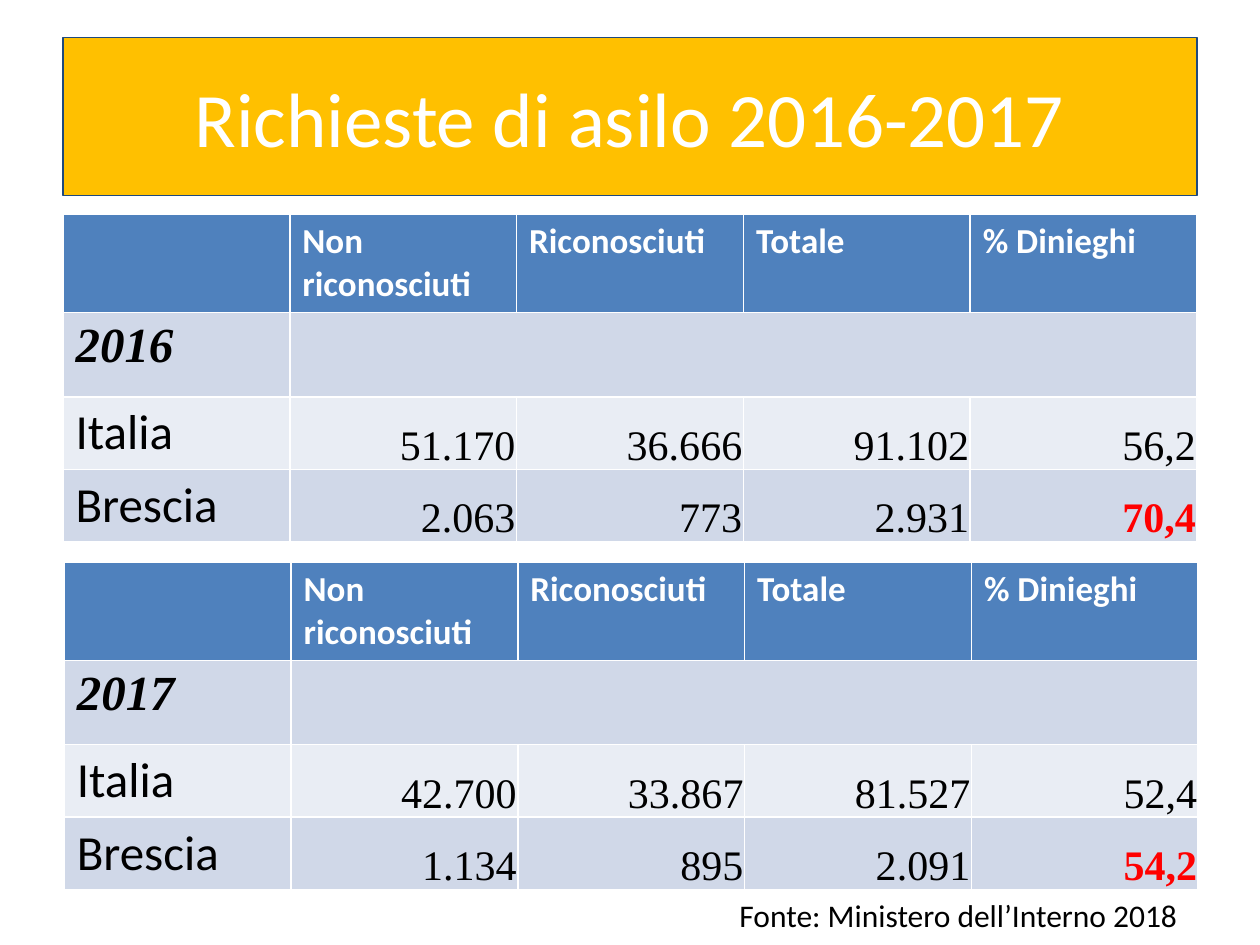
import pptx
import pptx.util
import pptx.dml.color
import pptx.enum.shapes
import pptx.enum.text

ALIGN = pptx.enum.text.PP_ALIGN
ANCHOR = pptx.enum.text.MSO_ANCHOR
SANS, SERIF = "Calibri", "Times New Roman"
WHITE, BLACK, RED = "FFFFFF", "000000", "FF0000"
GOLD, NAVY, BLUE = "FFC000", "1F497D", "4F81BD"
DARK, LIGHT = "D0D8E8", "E9EDF4"

COLS, ROWS = 100, 75  # slide grid, ten units to the inch
HEAD = ["", "Non riconosciuti", "Riconosciuti", "Totale", "% Dinieghi"]
HIGHS = [7.7, 6.7, 5.7, 5.7]


def tint(code):
    return pptx.dml.color.RGBColor.from_string(code)


def unit(size):
    return pptx.util.Inches(size / 10)


def paint(part, code):
    part.fill.solid()
    part.fill.fore_color.rgb = tint(code)


class Deck:
    def __init__(self):
        self.file = pptx.Presentation()
        self.file.slide_width = unit(COLS)
        self.file.slide_height = unit(ROWS)
        self.slide = self.file.slides.add_slide(self.file.slide_layouts[6])

    def label(self, frame, text, size, color, font=SANS, bold=False,
              slant=False, align=ALIGN.LEFT, space=None):
        frame.text = text
        for para in frame.paragraphs:
            para.alignment = align
            para.line_spacing = space
            for run in para.runs:
                run.font.name = font
                run.font.size = pptx.util.Pt(size)
                run.font.bold = bold
                run.font.italic = slant
                run.font.color.rgb = tint(color)

    def title(self, text, *box):
        shape = self.slide.shapes.add_shape(
            pptx.enum.shapes.MSO_SHAPE.RECTANGLE, *map(unit, box))
        shape.shadow.inherit = False
        paint(shape, GOLD)
        shape.line.color.rgb = tint(NAVY)
        shape.line.width = pptx.util.Pt(0.75)
        shape.text_frame.vertical_anchor = ANCHOR.MIDDLE
        self.label(shape.text_frame, text, 44, WHITE, align=ALIGN.CENTER)

    def note(self, text, *box):
        shape = self.slide.shapes.add_textbox(*map(unit, box))
        shape.text_frame.word_wrap = False
        self.label(shape.text_frame, text, 18, BLACK)

    def value(self, cell, text, alert):
        cell.vertical_anchor = ANCHOR.BOTTOM
        cell.margin_left = cell.margin_right = unit(0.1)
        cell.margin_top = cell.margin_bottom = 0
        self.label(cell.text_frame, text, 24, RED if alert else BLACK, SERIF,
                   bold=alert, align=ALIGN.RIGHT, space=1.07)

    def table(self, year, data, left, top, wide):
        grid = self.slide.shapes.add_table(
            len(HIGHS), len(HEAD), unit(left), unit(top),
            unit(wide), unit(sum(HIGHS))).table
        for col in grid.columns:
            col.width = unit(wide / len(HEAD))
        for row, high, fill in zip(grid.rows, HIGHS, [BLUE, DARK, LIGHT, DARK]):
            row.height = unit(high)
            for cell in row.cells:
                paint(cell, fill)

        # Header and year band
        for num, text in enumerate(HEAD):
            self.label(grid.cell(0, num).text_frame, text, 20, WHITE, bold=True)
        self.label(grid.cell(1, 0).text_frame, year, 28, BLACK, SERIF,
                   bold=True, slant=True)
        grid.cell(1, 1).merge(grid.cell(1, len(HEAD) - 1))

        # Places and their figures; the last figure stands out
        for line, (place, *figures) in enumerate(data, 2):
            self.label(grid.cell(line, 0).text_frame, place, 28, BLACK)
            for num, text in enumerate(figures, 1):
                alert = line == len(HIGHS) - 1 and num == len(figures)
                self.value(grid.cell(line, num), text, alert)


def main():
    deck = Deck()
    deck.title("Richieste di asilo 2016-2017", 5, 3, 90, 12.5)
    deck.table("2016", [
        ["Italia", "51.170", "36.666", "91.102", "56,2"],
        ["Brescia", "2.063", "773", "2.931", "70,4"],
    ], 5, 17, 90)
    deck.table("2017", [
        ["Italia", "42.700", "33.867", "81.527", "52,4"],
        ["Brescia", "1.134", "895", "2.091", "54,2"],
    ], 5.1, 44.6, 90)
    deck.note("Fonte: Ministero dell’Interno 2018", 57.7, 70.6, 37.2, 4)
    deck.file.save("out.pptx")


if __name__ == "__main__":
    main()
